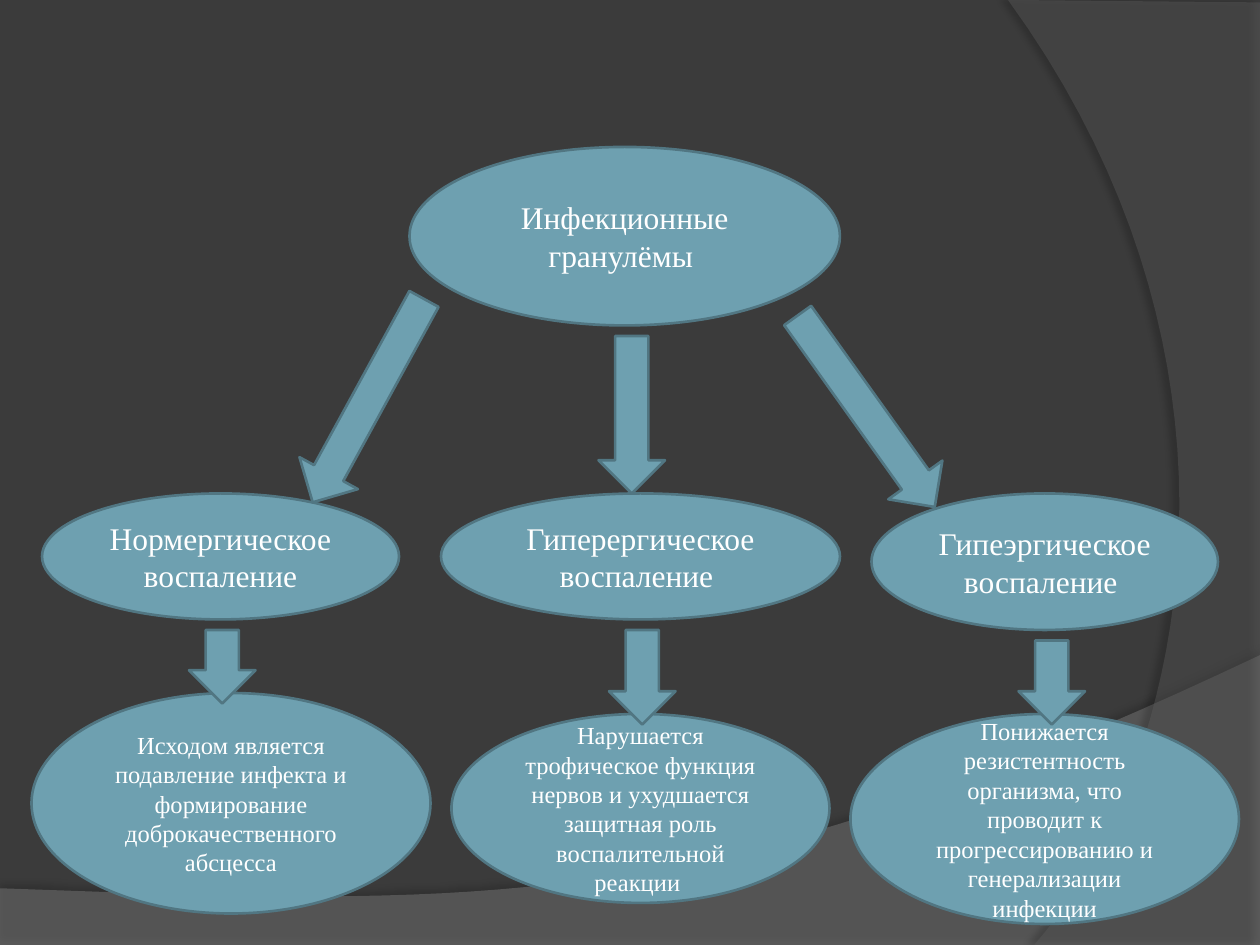
"""Build a slide showing infectious granulomas, their kinds and outcomes."""
from dataclasses import dataclass

from lxml.etree import SubElement
from pptx import Presentation
from pptx.dml.color import RGBColor
from pptx.enum.shapes import MSO_SHAPE as Preset
from pptx.enum.text import MSO_ANCHOR as Anchor, PP_ALIGN as Align
from pptx.oxml.ns import qn
from pptx.util import Pt

FILL, LINE, WHITE, BACKGROUND = "6EA0B0", "517682", "FFFFFF", "3B3B3B"
CURVE_STEPS = 40
ARROW_WIDTH = 38

Point = tuple[float, float]


@dataclass
class Wave:
    corners: list[Point]
    curve: list[Point]
    color: str
    opacity: int
    shadow_opacity: int
    shadow_distance: float
    shadow_angle: int


@dataclass
class Bubble:
    text: str
    left: float
    top: float
    width: float
    height: float
    size: int = 18


@dataclass
class Arrow:
    left: float
    top: float
    width: float
    height: float
    rotation: float = 0
    preset: Preset = Preset.DOWN_ARROW


WAVES = [
    Wave([(0, 540), (720, 540)],
         [(720, 374.4), (402.5, 524.9), (281.5, 517.7), (0, 507.6)],
         "7F7F7F", 45, 35, 3.5, 270),
    Wave([(720, 1.4), (720, 540)],
         [(591, 540), (673.2, 445.7), (733, 216), (576, 0)],
         "5E5E5E", 40, 45, 4, 180),
]
BUBBLES = [
    Bubble("Инфекционные гранулёмы ", 234, 84, 246, 102),
    Bubble("Нормергическое воспаление", 24, 282, 204, 72),
    Bubble("Гиперергическое воспаление ", 252, 282, 228, 72),
    Bubble("Гипеэргическое воспаление ", 498, 282, 198, 78),
    Bubble("Исходом является подавление инфекта и формирование "
           "доброкачественного абсцесса", 18, 396, 228, 126, 14),
    Bubble("Нарушается трофическое функция нервов и ухудшается защитная "
           "роль воспалительной реакции ", 258, 408, 216, 108, 14),
    Bubble("Понижается резистентность организма, что проводит к "
           "прогрессированию и генерализации инфекции", 486, 408, 222, 120, 14),
]
ARROWS = [
    Arrow(342, 192, ARROW_WIDTH, 90),
    Arrow(191.5, 162.7, ARROW_WIDTH, 132.5, 28.7),
    Arrow(427.7, 216, 134.6, ARROW_WIDTH, 54.4, Preset.RIGHT_ARROW),
    Arrow(348, 360, ARROW_WIDTH, 54),
    Arrow(108, 360, ARROW_WIDTH, 42),
    Arrow(582, 366, ARROW_WIDTH, 48),
]


def paint(target, color: str) -> None:
    target.solid()
    target.fore_color.rgb = RGBColor.from_string(color)


def apply(target, values: dict) -> None:
    for name, value in values.items():
        setattr(target, name, value)


def bezier(points: list[Point], t: float) -> Point:
    weights = ((1 - t) ** 3, 3 * t * (1 - t) ** 2, 3 * t ** 2 * (1 - t), t ** 3)
    x, y = (sum(w * p[axis] for w, p in zip(weights, points)) for axis in (0, 1))
    return Pt(x), Pt(y)


def add_alpha(color_element, percent: int) -> None:
    SubElement(color_element, qn("a:alpha"), val=str(percent * 1000))


def draw_wave(slide, wave: Wave) -> None:
    outline = [bezier(wave.curve, step / CURVE_STEPS) for step in range(CURVE_STEPS + 1)]
    outline += [(Pt(x), Pt(y)) for x, y in wave.corners]
    builder = slide.shapes.build_freeform(*outline[0])
    builder.add_line_segments(outline[1:], close=True)
    shape = builder.convert_to_shape()
    paint(shape.fill, wave.color)
    shape.line.fill.background()
    shape.shadow.inherit = False
    properties = shape._element.spPr
    add_alpha(properties.find(qn("a:solidFill")).find(qn("a:srgbClr")), wave.opacity)
    shadow = SubElement(
        properties.find(qn("a:effectLst")), qn("a:outerShdw"),
        blurRad=str(Pt(4)), dist=str(Pt(wave.shadow_distance)),
        dir=str(wave.shadow_angle * 60000), algn="ctr", rotWithShape="0")
    add_alpha(SubElement(shadow, qn("a:srgbClr"), val="000000"), wave.shadow_opacity)


def add_figure(slide, preset: Preset, item: Bubble | Arrow):
    box = [Pt(value) for value in (item.left, item.top, item.width, item.height)]
    shape = slide.shapes.add_shape(preset, *box)
    shape.shadow.inherit = False
    paint(shape.fill, FILL)
    paint(shape.line.fill, LINE)
    shape.line.width = Pt(1.5)
    return shape


def draw_bubble(slide, bubble: Bubble) -> None:
    frame = add_figure(slide, Preset.OVAL, bubble).text_frame
    apply(frame, {"word_wrap": True, "vertical_anchor": Anchor.MIDDLE})
    paragraph = frame.paragraphs[0]
    paragraph.alignment = Align.CENTER
    run = paragraph.add_run()
    run.text = bubble.text
    apply(run.font, {"name": "Times New Roman", "size": Pt(bubble.size)})
    paint(run.font.fill, WHITE)


def draw_arrow(slide, arrow: Arrow) -> None:
    add_figure(slide, arrow.preset, arrow).rotation = arrow.rotation


def main() -> None:
    presentation = Presentation()
    apply(presentation, {"slide_width": Pt(720), "slide_height": Pt(540)})
    slide = presentation.slides.add_slide(presentation.slide_layouts[6])
    paint(slide.background.fill, BACKGROUND)
    for draw, items in ((draw_wave, WAVES), (draw_bubble, BUBBLES), (draw_arrow, ARROWS)):
        for item in items:
            draw(slide, item)
    presentation.save("out.pptx")


if __name__ == "__main__":
    main()
